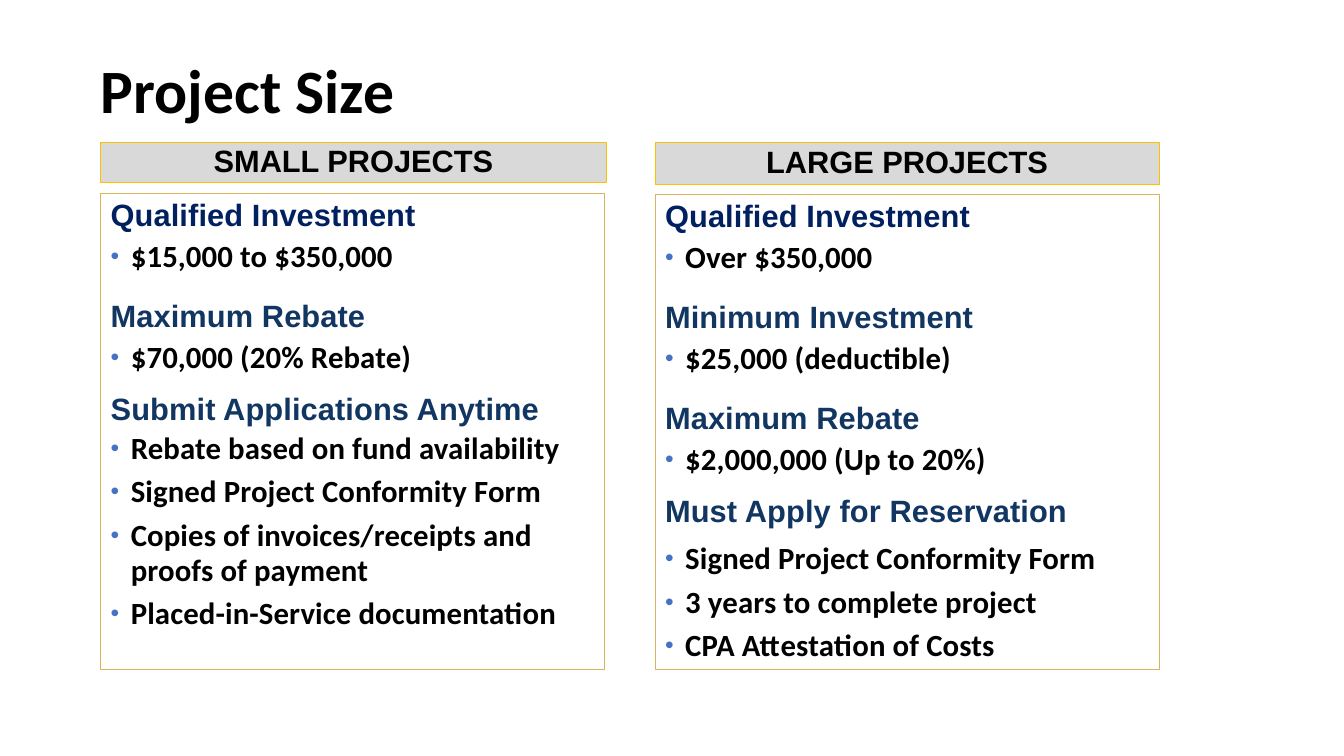
"""Build the Project Size slide comparing small and large projects."""
from lxml.etree import SubElement
from pptx import Presentation
from pptx.dml.color import RGBColor
from pptx.enum.shapes import MSO_SHAPE as Shape
from pptx.enum.text import MSO_ANCHOR as Anchor, PP_ALIGN as Align
from pptx.oxml.ns import qn
from pptx.util import Pt

BLACK = RGBColor(0x00, 0x00, 0x00)
WHITE = RGBColor(0xFF, 0xFF, 0xFF)
GREY = RGBColor(0xD9, 0xD9, 0xD9)
GOLD = RGBColor(0xFF, 0xC0, 0x00)
TAN = RGBColor(0xD9, 0xB3, 0x5E)
NAVY = RGBColor(0x00, 0x20, 0x60)
DARK_BLUE = RGBColor(0x11, 0x36, 0x62)
BULLET_BLUE = RGBColor(0x44, 0x72, 0xC4)

BOX_BOTTOM = 478
COLUMNS = [
    (72, 361, 28, 138.2, "SMALL PROJECTS", [
        ("Qualified Investment", NAVY, 14, 2, 2, 6, ["$15,000 to $350,000"]),
        ("Maximum Rebate", DARK_BLUE, 12, 2, 2, 6, ["$70,000 (20% Rebate)"]),
        ("Submit Applications Anytime", DARK_BLUE, 6, 0, 3, 3, [
            "Rebate based on fund availability",
            "Signed Project Conformity Form",
            "Copies of invoices/receipts and proofs of payment",
            "Placed-in-Service documentation",
        ]),
    ]),
    (468, 360, 30, 139, "LARGE PROJECTS", [
        ("Qualified Investment", NAVY, 14, 2, 2, 6, ["Over $350,000"]),
        ("Minimum Investment", DARK_BLUE, 12, 2, 2, 6, ["$25,000 (deductible)"]),
        ("Maximum Rebate", DARK_BLUE, 12, 2, 2, 6, ["$2,000,000 (Up to 20%)"]),
        ("Must Apply for Reservation", DARK_BLUE, 6, 6, 3, 3, [
            "Signed Project Conformity Form",
            "3 years to complete project",
            "CPA Attestation of Costs",
        ]),
    ]),
]


def add_panel(left, top, width, height, fill, line, weight):
    panel = page.shapes.add_shape(Shape.RECTANGLE, Pt(left), Pt(top), Pt(width), Pt(height))
    panel.shadow.inherit = False
    panel.fill.solid()
    panel.fill.fore_color.rgb = fill
    panel.line.color.rgb = line
    panel.line.width = Pt(weight)
    panel.text_frame.word_wrap = True
    return panel.text_frame


def write(para, text, font, size, color, spacing, before=0, after=0):
    para.text = text
    para.line_spacing = spacing
    para.space_before = Pt(before)
    para.space_after = Pt(after)
    span = para.runs[0]
    span.font.name = font
    span.font.size = Pt(size)
    span.font.bold = True
    span.font.color.rgb = color
    return span


deck = Presentation()
deck.slide_width = Pt(960)
deck.slide_height = Pt(540)
page = deck.slides.add_slide(deck.slide_layouts[6])

for left, header_width, header_height, box_top, header, sections in COLUMNS:
    body = add_panel(left, box_top, 360, BOX_BOTTOM - box_top, WHITE, TAN, 0.75)
    body.vertical_anchor = Anchor.TOP
    lines = []
    for heading, color, before, after, item_before, item_after, items in sections:
        lines.append((heading, "Arial", color, before, after, False))
        lines += [(item, "Calibri", BLACK, item_before, item_after, True) for item in items]
    for index, (text, font, color, before, after, bulleted) in enumerate(lines):
        para = body.add_paragraph() if index else body.paragraphs[0]
        span = write(para, text, font, 22, color, 0.95, before, after)
        span.font._element.set("spc", "10")
        para.alignment = Align.LEFT
        if bulleted:
            properties = para._p.get_or_add_pPr()
            properties.set("marL", str(Pt(14.4)))
            properties.set("indent", str(-Pt(14.4)))
            bullet_color = SubElement(properties, qn("a:buClr"))
            SubElement(bullet_color, qn("a:srgbClr"), val=str(BULLET_BLUE))
            SubElement(properties, qn("a:buSzPct"), val="80000")
            SubElement(properties, qn("a:buFont"), typeface="Arial")
            SubElement(properties, qn("a:buChar"), char="•")

    label = add_panel(left, 102, header_width, header_height, GREY, GOLD, 0.5)
    label.vertical_anchor = Anchor.MIDDLE
    label.margin_left = label.margin_right = Pt(4.5)
    label.margin_top = label.margin_bottom = Pt(4.5)
    write(label.paragraphs[0], header, "Arial", 22, BLACK, 0.9)
    label.paragraphs[0].alignment = Align.CENTER

title = page.shapes.add_textbox(Pt(65), Pt(18), Pt(763), Pt(76)).text_frame
title.word_wrap = True
title.vertical_anchor = Anchor.BOTTOM
write(title.paragraphs[0], "Project Size", "Calibri", 44, BLACK, 0.9)

deck.save("out.pptx")
